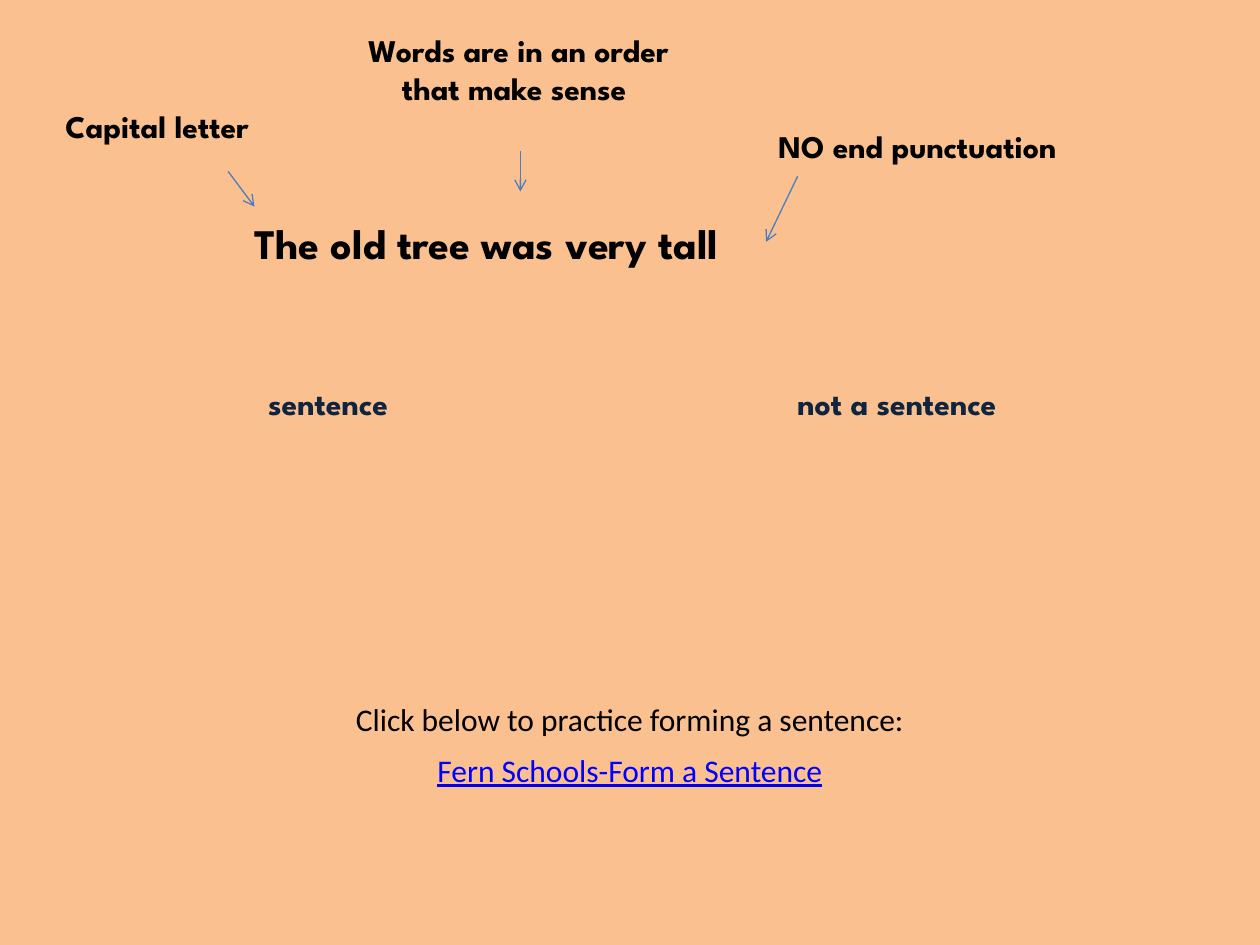
"""Build a slide that shows what makes a sentence."""
from lxml import etree
from pptx import Presentation
from pptx.dml.color import RGBColor
from pptx.enum.shapes import MSO_CONNECTOR
from pptx.enum.text import MSO_AUTO_SIZE, PP_ALIGN
from pptx.oxml.ns import qn
from pptx.util import Inches, Pt

LEFT, MID = PP_ALIGN.LEFT, PP_ALIGN.CENTER
STRAIGHT = MSO_CONNECTOR.STRAIGHT
GROW = MSO_AUTO_SIZE.SHAPE_TO_FIT_TEXT

COLORS = {"back": "FAC090", "black": "000000", "navy": "0F243E",
          "link": "0000FF", "arrow": "4B7EBC"}
HEAD, BODY = "League Spartan", "Calibri"

LABELS = [
    ("The old tree was very tall", (1.92, 1.68, 6, 0.5), 24, "black", LEFT),
    ("sentence", (2.03, 3, 1.58, 0.4), 18, "navy", LEFT),
    ("not a sentence", (6.23, 3, 2.92, 0.4), 18, "navy", LEFT),
    ("Capital letter", (0.42, 0.8, 2.25, 0.4), 18, "black", LEFT),
    ("Words are in an order that make sense ", (2.7, 0.2, 2.83, 0.71), 18, "black", MID),
    ("NO end punctuation", (6.08, 0.96, 2.83, 0.4), 18, "black", LEFT),
]
PROMPTS = [("Click below to practice forming a sentence:", "black"),
           ("Fern Schools-Form a Sentence", "link")]
ARROWS = [(1.81, 1.36, 2.02, 1.64), (4.13, 1.2, 4.13, 1.52), (6.33, 1.4, 6.08, 1.92)]


def paint(name):
    return RGBColor.from_string(COLORS[name])


def add_text(slide, text, place, size, color, align, face=HEAD):
    box = slide.shapes.add_textbox(*map(Inches, place))
    frame = box.text_frame
    frame.word_wrap = True
    frame.auto_size = GROW
    frame.text = text
    line = frame.paragraphs[0]
    line.alignment = align
    font = line.runs[0].font
    font.name, font.size, font.bold = face, Pt(size), face == HEAD
    font.underline = color == "link"
    font.color.rgb = paint(color)


def add_arrow(slide, ends):
    arrow = slide.shapes.add_connector(STRAIGHT, *map(Inches, ends))
    arrow.line.color.rgb = paint("arrow")
    arrow.line.width = Pt(0.75)
    etree.SubElement(arrow.line._get_or_add_ln(), qn("a:tailEnd"), type="arrow")
    etree.SubElement(arrow._element.spPr, qn("a:effectLst"))


def main():
    deck = Presentation()
    deck.slide_width, deck.slide_height = Inches(10), Inches(7.5)
    slide = deck.slides.add_slide(deck.slide_layouts[6])
    slide.background.fill.solid()
    slide.background.fill.fore_color.rgb = paint("back")
    for label in LABELS:
        add_text(slide, *label)
    for ends in ARROWS:
        add_arrow(slide, ends)
    for row, (text, color) in enumerate(PROMPTS):
        add_text(slide, text, (0, 5.51 + 0.4 * row, 10, 0.4), 18, color, MID, BODY)
    deck.save("out.pptx")


if __name__ == "__main__":
    main()
